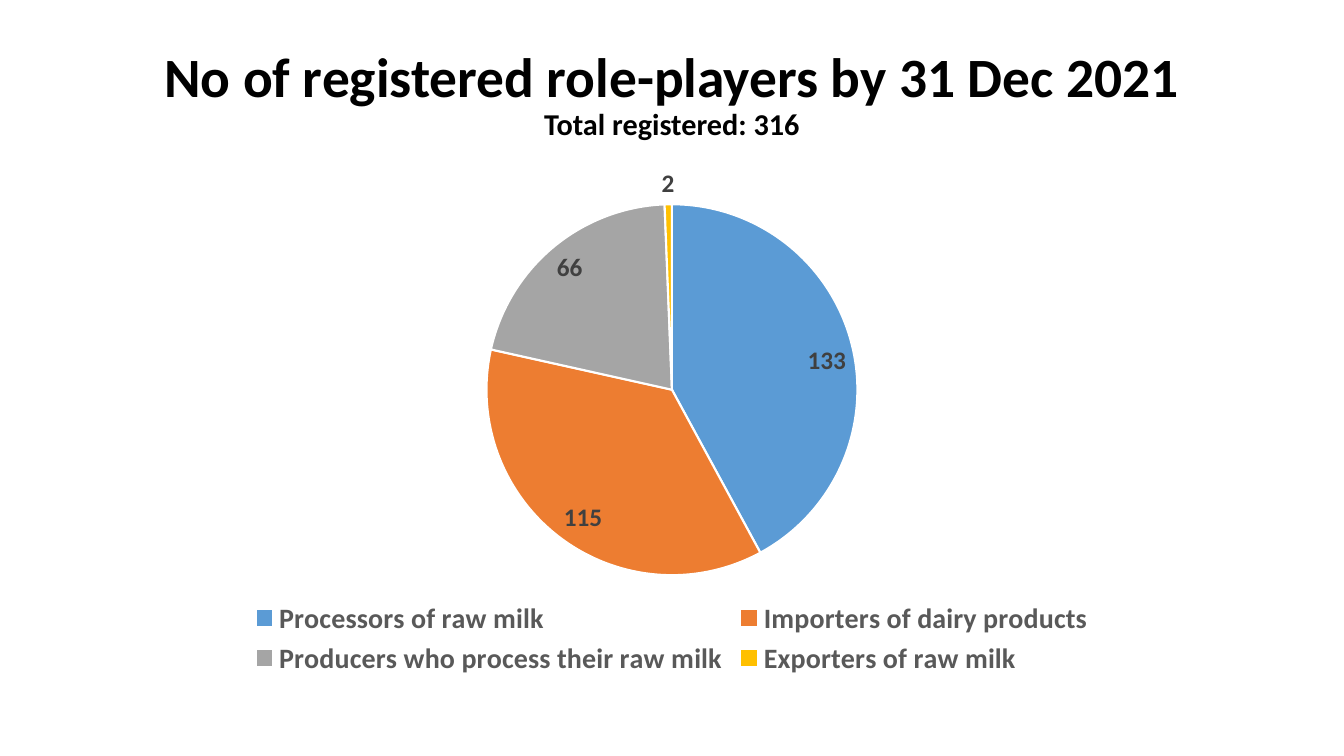
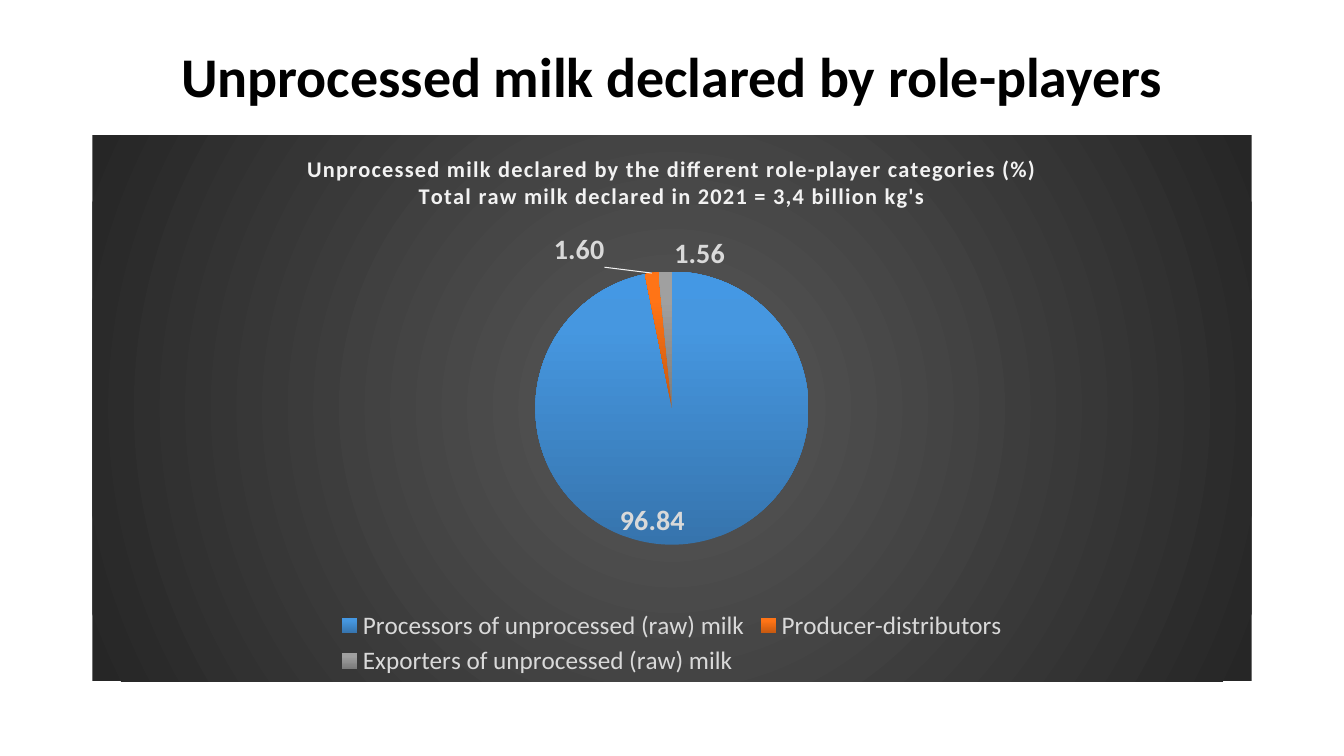
from dataclasses import dataclass

from pptx import Presentation
from pptx import util as u
from pptx.chart import data as chart_data
from pptx.dml import color as dml
from pptx.enum import chart as ch
from pptx.enum import text as tx
from pptx.oxml import parse_xml
from pptx.oxml.ns import nsdecls

FONT = "Calibri"
COLORS = {
    "title": "000000",
    "blue": "5B9BD5",
    "orange": "ED7D31",
    "grey": "A5A5A5",
    "gold": "FFC000",
    "edge": "FFFFFF",
    "label": "404040",
    "legend": "595959",
    "light": "D9D9D9",
    "heading": "F2F2F2",
}
LEFT, WIDTH, BOTTOM = 66, 828, 486.7
TITLE_TOP = 29

Stops = list[tuple[int, str]]
BACKDROP: Stops = [(0, "595959"), (100, "262626")]
UPWARD = '<a:lin ang="16200000" scaled="0"/>'
CIRCLE = ('<a:path path="circle"><a:fillToRect l="50000" t="50000" '
          'r="50000" b="50000"/></a:path>')


@dataclass
class Line:
    text: str
    size: float


@dataclass
class Slice:
    name: str
    value: float
    fill: str | Stops
    outside: bool = False
    shift: tuple[float, float] | None = None


@dataclass
class PieSlide:
    title: list[Line]
    title_height: float
    chart_top: float
    plot: tuple[float, float, float, float]
    slices: list[Slice]
    number_format: str
    label_size: float
    label_color: str
    legend_size: float
    legend_color: str
    legend_bold: bool
    heading: list[Line]
    backdrop: Stops | None = None


SLIDES = [
    PieSlide(
        title=[Line("No of registered role-players by 31 Dec 2021", 39.6),
               Line("Total registered: 316", 21.6)],
        title_height=79, chart_top=108, plot=(0.34, 0.1, 0.32, 0.7),
        slices=[
            Slice("Processors of raw milk", 133, COLORS["blue"]),
            Slice("Importers of dairy products", 115, COLORS["orange"]),
            Slice("Producers who process their raw milk", 66, COLORS["grey"]),
            Slice("Exporters of raw milk", 2, COLORS["gold"], outside=True),
        ],
        number_format="General", label_size=18, label_color=COLORS["label"],
        legend_size=20, legend_color=COLORS["legend"], legend_bold=True,
        heading=[],
    ),
    PieSlide(
        title=[Line("Unprocessed milk declared by role-players", 40)],
        title_height=56, chart_top=96.5, plot=(0.38, 0.25, 0.24, 0.5),
        slices=[
            Slice("Processors of unprocessed (raw) milk", 96.84,
                  [(0, "3674AD"), (80, "4697E0"), (100, "4498E4")]),
            Slice("Producer-distributors", 1.6,
                  [(0, "C65910"), (80, "FF7416"), (100, "FF7517")],
                  outside=True, shift=(-0.04, 0)),
            Slice("Exporters of unprocessed (raw) milk", 1.56,
                  [(0, "7B7B7B"), (80, "A0A0A0"), (100, "A1A1A1")],
                  outside=True, shift=(0.03, 0.01)),
        ],
        number_format="0.00", label_size=20, label_color=COLORS["light"],
        legend_size=18, legend_color=COLORS["light"], legend_bold=False,
        heading=[
            Line("Unprocessed milk declared by the different "
                 "role-player categories (%)", 16),
            Line("Total raw milk declared in 2021 = 3,4 billion kg's", 16),
        ],
        backdrop=BACKDROP,
    ),
]


# Text
def style(font, *, size: float, color: str, bold: bool = False) -> None:
    font.name, font.size, font.bold = FONT, u.Pt(size), bold
    font.color.rgb = dml.RGBColor.from_string(color)


def write(paragraph, text: str, *, size: float, color: str,
          bold: bool = False, spacing: float = 0) -> None:
    run = paragraph.add_run()
    run.text = text
    style(run.font, size=size, color=color, bold=bold)
    if spacing:
        run._r.get_or_add_rPr().set("spc", str(round(spacing * 100)))


def add_title(slide, lines: list[Line], height: float) -> None:
    title = slide.shapes.title
    title.left, title.top = u.Pt(LEFT), u.Pt(TITLE_TOP)
    title.width, title.height = u.Pt(WIDTH), u.Pt(height)
    frame = title.text_frame
    frame.vertical_anchor = tx.MSO_ANCHOR.MIDDLE
    frame.auto_size = tx.MSO_AUTO_SIZE.NONE
    paragraph = frame.paragraphs[0]
    paragraph.alignment, paragraph.line_spacing = tx.PP_ALIGN.CENTER, 0.9
    for i, line in enumerate(lines):
        if i:
            paragraph.add_line_break()
        write(paragraph, line.text, size=line.size, color=COLORS["title"], bold=True)


# Chart XML
def gradient(stops: Stops, direction: str):
    marks = "".join(f'<a:gs pos="{pos * 1000}"><a:srgbClr val="{rgb}"/></a:gs>'
                    for pos, rgb in stops)
    return parse_xml(f'<a:gradFill {nsdecls("a")} rotWithShape="1">'
                     f'<a:gsLst>{marks}</a:gsLst>{direction}</a:gradFill>')


def layout(**values: float | str):
    parts = "".join(f'<c:{key} val="{value}"/>' for key, value in values.items())
    return parse_xml(f'<c:layout {nsdecls("c")}><c:manualLayout>{parts}'
                     '</c:manualLayout></c:layout>')


def fix_plot(chart, box: tuple[float, float, float, float]) -> None:
    area = chart._chartSpace.xpath("c:chart/c:plotArea")[0]
    for automatic in area.xpath("c:layout"):
        area.remove(automatic)
    x, y, w, h = box
    area.insert(0, layout(layoutTarget="inner", xMode="edge", yMode="edge",
                          x=x, y=y, w=w, h=h))


def fill_backdrop(chart, stops: Stops) -> None:
    properties = parse_xml(f'<c:spPr {nsdecls("c", "a")}><a:ln><a:noFill/></a:ln></c:spPr>')
    properties.insert(0, gradient(stops, CIRCLE))
    chart._chartSpace.xpath("c:chart")[0].addnext(properties)


# Chart parts
def add_heading(chart, lines: list[Line]) -> None:
    chart.has_title = bool(lines)
    if not lines:
        return
    frame = chart.chart_title.text_frame
    chart.chart_title.include_in_layout = False
    for i, line in enumerate(lines):
        paragraph = frame.add_paragraph() if i else frame.paragraphs[0]
        write(paragraph, line.text, size=line.size, color=COLORS["heading"],
              bold=True, spacing=1)


def add_legend(chart, page: PieSlide) -> None:
    chart.has_legend = True
    chart.legend.position = ch.XL_LEGEND_POSITION.BOTTOM
    chart.legend.include_in_layout = False
    style(chart.legend.font, size=page.legend_size, color=page.legend_color,
          bold=page.legend_bold)


def paint_slice(series, index: int, part: Slice) -> None:
    look = series.points[index].format
    if isinstance(part.fill, str):
        look.fill.solid()
        look.fill.fore_color.rgb = dml.RGBColor.from_string(part.fill)
        look.line.color.rgb = dml.RGBColor.from_string(COLORS["edge"])
        look.line.width = u.Pt(1.5)
    else:
        look.line.fill.background()
        properties = series._element.xpath(f'c:dPt[c:idx/@val="{index}"]/c:spPr')[0]
        properties.insert(0, gradient(part.fill, UPWARD))


def label_slices(series, page: PieSlide) -> None:
    labels = series.data_labels
    labels.show_value = True
    labels.number_format, labels.number_format_is_linked = page.number_format, False
    labels.position = ch.XL_LABEL_POSITION.INSIDE_END
    look = dict(size=page.label_size, color=page.label_color, bold=True)
    style(labels.font, **look)
    for i, part in enumerate(page.slices):
        if not part.outside:
            continue
        label = series.points[i].data_label
        style(label.font, **look)
        label.position = ch.XL_LABEL_POSITION.OUTSIDE_END
        if part.shift:
            index = series._element.xpath(f'c:dLbls/c:dLbl/c:idx[@val="{i}"]')[0]
            index.addnext(layout(x=part.shift[0], y=part.shift[1]))
    # Leader lines for the moved labels
    for leader in series._element.xpath("c:dLbls/c:showLeaderLines"):
        leader.addnext(parse_xml(
            f'<c:leaderLines {nsdecls("c", "a")}><c:spPr><a:ln w="9525"><a:solidFill>'
            f'<a:srgbClr val="{COLORS["heading"]}"/></a:solidFill></a:ln></c:spPr>'
            '</c:leaderLines>'))


def add_pie(slide, page: PieSlide) -> None:
    figures = chart_data.CategoryChartData(number_format=page.number_format)
    figures.categories = [part.name for part in page.slices]
    figures.add_series("Series 1", [part.value for part in page.slices])
    pie = slide.shapes.add_chart(
        ch.XL_CHART_TYPE.PIE, u.Pt(LEFT), u.Pt(page.chart_top), u.Pt(WIDTH),
        u.Pt(BOTTOM - page.chart_top), figures).chart
    style(pie.font, size=10, color=COLORS["title"])
    pie.plots[0].vary_by_categories = True
    add_heading(pie, page.heading)
    add_legend(pie, page)
    fix_plot(pie, page.plot)
    series = pie.plots[0].series[0]
    for i, part in enumerate(page.slices):
        paint_slice(series, i, part)
    label_slices(series, page)
    if page.backdrop:
        fill_backdrop(pie, page.backdrop)


def main() -> None:
    deck = Presentation()
    deck.slide_width, deck.slide_height = u.Pt(960), u.Pt(540)
    title_only = deck.slide_layouts[5]
    for page in SLIDES:
        slide = deck.slides.add_slide(title_only)
        add_title(slide, page.title, page.title_height)
        add_pie(slide, page)
    deck.save("out.pptx")


if __name__ == "__main__":
    main()
